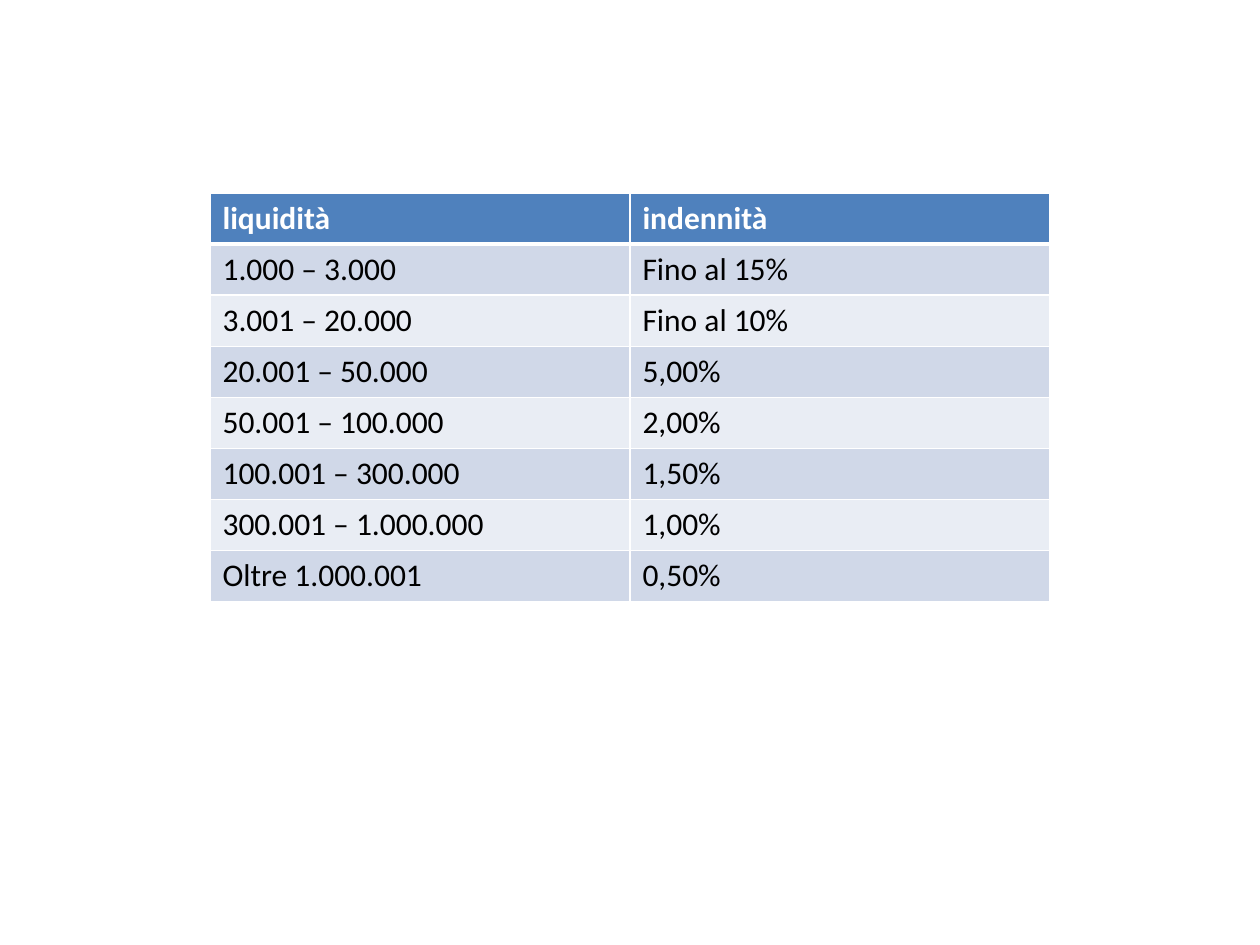
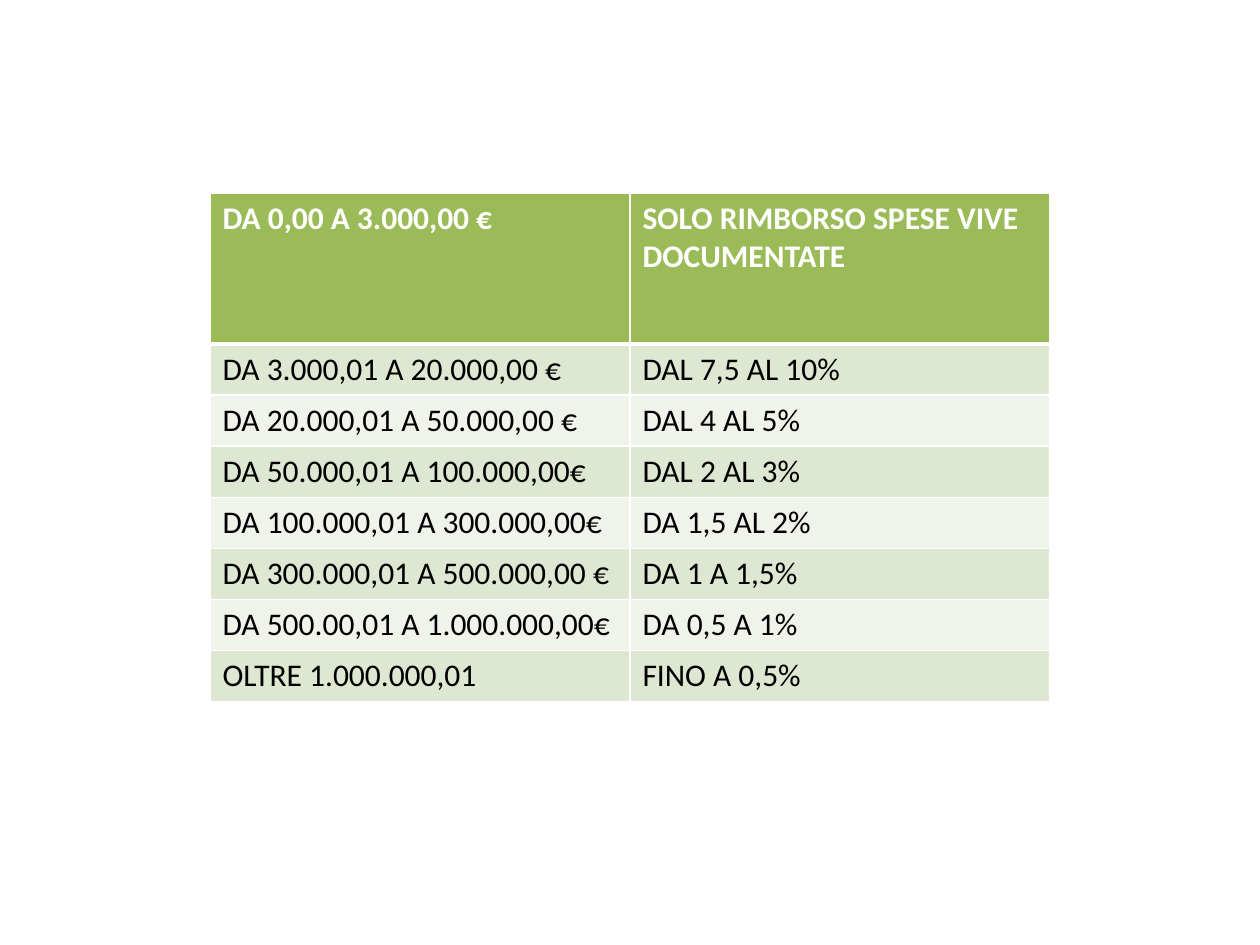
from pptx import Presentation
from pptx.dml.color import RGBColor
from pptx.oxml.ns import qn
from pptx.util import Pt
from lxml import etree

PX = 7257
SLIDE_SIZE = (1260, 945)
TABLE_ORIGIN = (210, 193)
COLUMN_WIDTH = 420
ROW_HEIGHT = 51
TALL_HEADER_HEIGHT = 151
BLANK_LAYOUT = 6

FONT = "Calibri"
FONT_SIZE = Pt(18)
THIN = Pt(1)
THICK = Pt(3)

WHITE = RGBColor(0xFF, 0xFF, 0xFF)
BLACK = RGBColor(0x00, 0x00, 0x00)
BLUE = RGBColor(0x4F, 0x81, 0xBD)
BLUE_BANDS = (RGBColor(0xD0, 0xD8, 0xE8), RGBColor(0xE9, 0xED, 0xF4))
GREEN = RGBColor(0x9B, 0xBB, 0x59)
GREEN_BANDS = (RGBColor(0xDE, 0xE7, 0xD1), RGBColor(0xEF, 0xF3, 0xEA))

LIQUIDITY_ROWS = [
    ("liquidità", "indennità"),
    ("1.000 – 3.000", "Fino al 15%"),
    ("3.001 – 20.000", "Fino al 10%"),
    ("20.001 – 50.000", "5,00%"),
    ("50.001 – 100.000", "2,00%"),
    ("100.001 – 300.000", "1,50%"),
    ("300.001 – 1.000.000", "1,00%"),
    ("Oltre 1.000.001", "0,50%"),
]
REFUND_ROWS = [
    ("DA 0,00 A 3.000,00 €", "SOLO RIMBORSO SPESE VIVE DOCUMENTATE"),
    ("DA 3.000,01 A 20.000,00 €", "DAL 7,5 AL 10%"),
    ("DA 20.000,01 A 50.000,00 €", "DAL 4 AL 5%"),
    ("DA 50.000,01 A 100.000,00€", "DAL 2 AL 3%"),
    ("DA 100.000,01 A 300.000,00€", "DA 1,5 AL 2%"),
    ("DA 300.000,01 A 500.000,00 €", "DA 1 A 1,5%"),
    ("DA 500.00,01 A 1.000.000,00€", "DA 0,5 A 1%"),
    ("OLTRE 1.000.000,01", "FINO A 0,5%"),
]


def set_borders(cell, top, bottom):
    properties = cell._tc.get_or_add_tcPr()
    sides = {"a:lnL": THIN, "a:lnR": THIN, "a:lnT": top, "a:lnB": bottom}
    for tag, width in sides.items():
        line = etree.SubElement(properties, qn(tag), w=str(width))
        fill = etree.SubElement(line, qn("a:solidFill"))
        etree.SubElement(fill, qn("a:srgbClr"), val=str(WHITE))


def style_cell(cell, text, row_index, header_color, bands):
    is_header = row_index == 0
    set_borders(
        cell,
        top=THICK if row_index == 1 else THIN,
        bottom=THICK if is_header else THIN,
    )
    cell.fill.solid()
    cell.fill.fore_color.rgb = header_color if is_header else bands[(row_index - 1) % 2]
    cell.text = text
    font = cell.text_frame.paragraphs[0].font
    font.name = FONT
    font.size = FONT_SIZE
    font.bold = is_header
    font.color.rgb = WHITE if is_header else BLACK


def add_rate_table(page, origin, rows, header_height, header_color, bands):
    left, top = origin
    column_count = len(rows[0])
    height = header_height + ROW_HEIGHT * (len(rows) - 1)
    table = page.shapes.add_table(
        len(rows), column_count,
        left * PX, top * PX, COLUMN_WIDTH * column_count * PX, height * PX,
    ).table
    for column in table.columns:
        column.width = COLUMN_WIDTH * PX
    for row_index, texts in enumerate(rows):
        row = table.rows[row_index]
        row.height = (ROW_HEIGHT if row_index else header_height) * PX
        for cell, text in zip(row.cells, texts):
            style_cell(cell, text, row_index, header_color, bands)


def main():
    deck = Presentation()
    deck.slide_width, deck.slide_height = (side * PX for side in SLIDE_SIZE)
    tables = [
        (LIQUIDITY_ROWS, ROW_HEIGHT, BLUE, BLUE_BANDS),
        (REFUND_ROWS, TALL_HEADER_HEIGHT, GREEN, GREEN_BANDS),
    ]
    for rows, header_height, header_color, bands in tables:
        page = deck.slides.add_slide(deck.slide_layouts[BLANK_LAYOUT])
        add_rate_table(page, TABLE_ORIGIN, rows, header_height, header_color, bands)
    deck.save("out.pptx")


if __name__ == "__main__":
    main()
